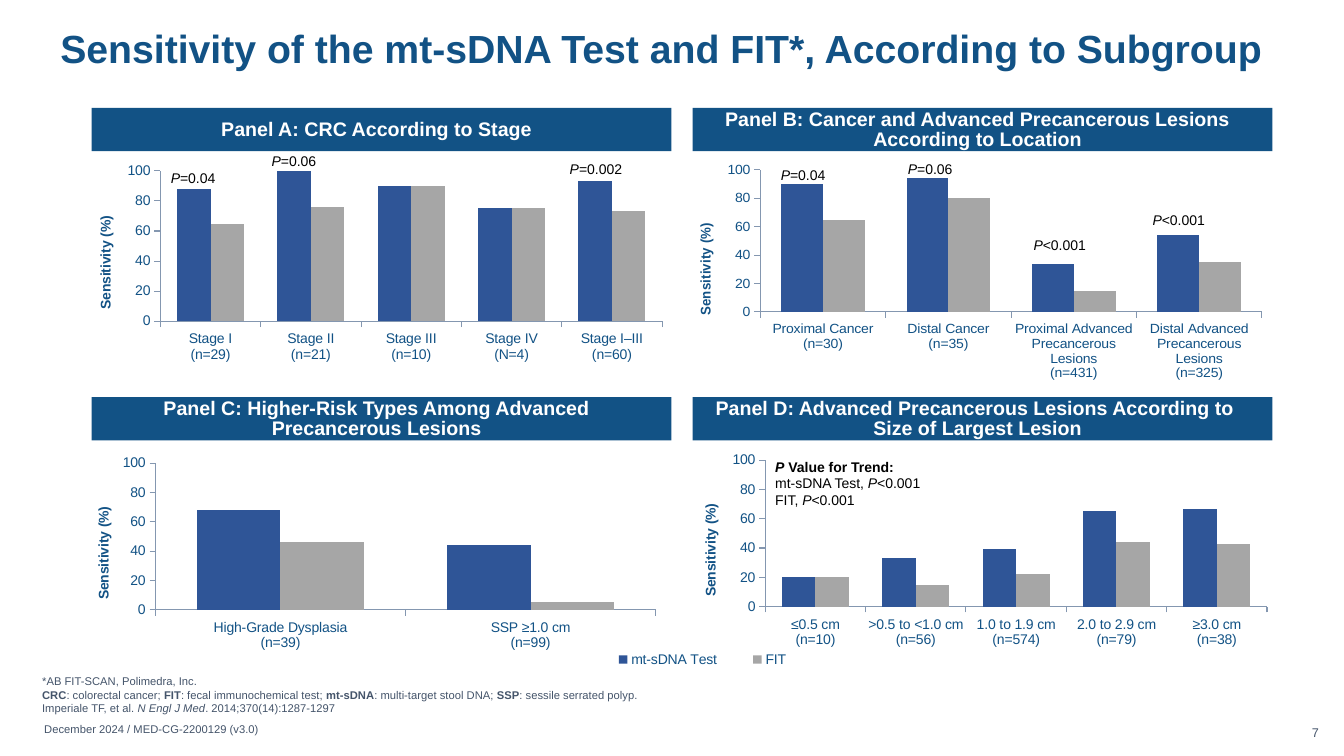
import pptx
import pptx.util
import pptx.chart.data
import pptx.dml.color
import pptx.enum.chart
import pptx.enum.shapes
import pptx.enum.text
import pptx.oxml
import pptx.oxml.ns

Inches, Pt = pptx.util.Inches, pptx.util.Pt
RGBColor = pptx.dml.color.RGBColor
Align, Anchor = pptx.enum.text.PP_ALIGN, pptx.enum.text.MSO_ANCHOR

NAVY = RGBColor(0x12, 0x52, 0x85)
BAR_BLUE = RGBColor(0x2F, 0x55, 0x97)
BAR_GRAY = RGBColor(0xA6, 0xA6, 0xA6)
AXIS_LINE = RGBColor(0x84, 0x97, 0xB0)
SLATE = RGBColor(0x44, 0x54, 0x6A)
BLACK = RGBColor(0, 0, 0)
WHITE = RGBColor(0xFF, 0xFF, 0xFF)


class SubgroupSlide:
    font = "Arial"

    def __init__(self, presentation):
        self.slide = presentation.slides.add_slide(presentation.slide_layouts[6])

    def fill_text(self, frame, paragraphs, size, color, align=Align.LEFT, spacing=None):
        """Each paragraph is a list of (text, style); style holds b and/or i."""
        for index, pieces in enumerate(paragraphs):
            paragraph = frame.add_paragraph() if index else frame.paragraphs[0]
            paragraph.alignment = align
            if spacing:
                paragraph.line_spacing = spacing
            for text, style in pieces:
                for number, line in enumerate(text.split("\n")):
                    if number:
                        paragraph.add_line_break()
                    run = paragraph.add_run()
                    run.text = line
                    run.font.name, run.font.size = self.font, Pt(size)
                    run.font.color.rgb = color
                    run.font.bold, run.font.italic = "b" in style, "i" in style

    def text(self, box, paragraphs, size, color, anchor=Anchor.MIDDLE, wrap=True,
             inset=None, **layout):
        frame = self.slide.shapes.add_textbox(*map(Inches, box)).text_frame
        frame.word_wrap = wrap
        frame.vertical_anchor = anchor
        if inset is not None:
            frame.margin_left = frame.margin_right = Inches(inset)
            frame.margin_top = frame.margin_bottom = Inches(inset)
        self.fill_text(frame, paragraphs, size, color, **layout)

    def p_value(self, value, left, top):
        width = 0.65 if len(value) == 5 else 0.72
        self.text((left, top, width, 0.27), [[("P", "i"), (value, "")]], 10, BLACK,
                  wrap=False, align=Align.CENTER)

    def banner(self, left, top, heading):
        bar = self.slide.shapes.add_shape(
            pptx.enum.shapes.MSO_SHAPE.RECTANGLE,
            Inches(left), Inches(top), Inches(5.75), Inches(0.43))
        bar.shadow.inherit = False
        bar.fill.solid()
        bar.fill.fore_color.rgb = NAVY
        bar.line.fill.background()
        frame = bar.text_frame
        frame.word_wrap = True
        frame.vertical_anchor = Anchor.MIDDLE
        frame.margin_left, frame.margin_right = 0, Inches(0.1)
        frame.margin_top, frame.margin_bottom = Inches(0.05), Inches(0.03)
        self.fill_text(frame, [[(heading, "b")]], 14, WHITE, Align.CENTER, 0.86)

    def place(self, parent, index, target, x, y, w, h):
        """Give a plot area or legend a fixed place within its chart."""
        inner = '<c:layoutTarget val="inner"/>' if target else ""
        for old in parent.findall(pptx.oxml.ns.qn("c:layout")):
            parent.remove(old)
        parent.insert(index, pptx.oxml.parse_xml(
            f'<c:layout {pptx.oxml.ns.nsdecls("c")}><c:manualLayout>{inner}'
            '<c:xMode val="edge"/><c:yMode val="edge"/>'
            f'<c:x val="{x}"/><c:y val="{y}"/><c:w val="{w}"/><c:h val="{h}"/>'
            '</c:manualLayout></c:layout>'))

    def columns(self, box, categories, test, fit, plot, legend=None):
        data = pptx.chart.data.CategoryChartData()
        data.categories = categories
        data.add_series("mt-sDNA Test", test)
        data.add_series("FIT", fit)
        chart = self.slide.shapes.add_chart(
            pptx.enum.chart.XL_CHART_TYPE.COLUMN_CLUSTERED,
            *map(Inches, box), data).chart
        chart.has_title = False
        chart.font.name, chart.font.size = self.font, Pt(10)
        chart.font.color.rgb = NAVY

        # Bars, on a clear background
        bars = chart.plots[0]
        bars.gap_width, bars.overlap, bars.vary_by_categories = 100, 0, False
        for series, color in zip(bars.series, (BAR_BLUE, BAR_GRAY)):
            series.format.fill.solid()
            series.format.fill.fore_color.rgb = color
        plot_area = bars._element.getparent()
        self.place(plot_area, 0, True, *plot)
        plot_area.getparent().addnext(pptx.oxml.parse_xml(
            f'<c:spPr {pptx.oxml.ns.nsdecls("c", "a")}><a:noFill/>'
            '<a:ln><a:noFill/></a:ln></c:spPr>'))

        # Axes
        for axis in (chart.category_axis, chart.value_axis):
            axis.has_major_gridlines = False
            axis.major_tick_mark = pptx.enum.chart.XL_TICK_MARK.OUTSIDE
            axis.minor_tick_mark = pptx.enum.chart.XL_TICK_MARK.NONE
            axis.format.line.color.rgb = AXIS_LINE
            axis.format.line.width = Pt(0.75)
        percent = chart.value_axis
        percent.minimum_scale, percent.maximum_scale, percent.major_unit = 0, 100, 20
        self.fill_text(percent.axis_title.text_frame, [[("Sensitivity (%)", "b")]], 10,
                       NAVY, Align.CENTER)

        # Legend
        chart.has_legend = legend is not None
        if legend:
            chart.legend.position = pptx.enum.chart.XL_LEGEND_POSITION.BOTTOM
            chart.legend.include_in_layout = False
            chart.legend.font.name, chart.legend.font.size = self.font, Pt(10)
            chart.legend.font.color.rgb = NAVY
            self.place(chart.legend._element, 1, False, *legend)


def main():
    presentation = pptx.Presentation()
    presentation.slide_width, presentation.slide_height = Inches(13.33), Inches(7.5)
    page = SubgroupSlide(presentation)

    # Title
    page.text((0.5, -0.01, 12.32, 1.04),
              [[("Sensitivity of the mt-sDNA Test and FIT*, According to Subgroup", "b")]],
              28, NAVY, spacing=0.85)

    # Panels: banner, chart, P values
    left, right, upper, lower = 0.91, 6.87, 1.07, 3.94
    upper_plot, lower_plot = (0.115, 0.086, 0.867, 0.654), (0.115, 0.086, 0.867, 0.637)
    panels = [
        (left, upper, "Panel A: CRC According to Stage",
         (0.93, 1.5, 5.74, 2.28),
         ["Stage I\n(n=29)", "Stage II\n(n=21)", "Stage III\n(n=10)",
          "Stage IV\n(N=4)", "Stage I–III\n(n=60)"],
         (88, 100, 90, 75, 93), (65, 76, 90, 75, 73), upper_plot, None,
         [("=0.04", 1.59, 1.63), ("=0.06", 2.59, 1.46), ("=0.002", 5.55, 1.54)]),
        (right, upper,
         "Panel B: Cancer and Advanced Precancerous Lesions\nAccording to Location",
         (6.88, 1.5, 5.74, 2.28),
         ["Proximal Cancer\n(n=30)", "Distal Cancer\n(n=35)",
          "Proximal Advanced\nPrecancerous Lesions\n(n=431)",
          "Distal Advanced\nPrecancerous Lesions\n(n=325)"],
         (90, 94, 34, 54), (65, 80, 15, 35), upper_plot, None,
         [("=0.04", 7.64, 1.6), ("=0.06", 8.9, 1.54),
          ("<0.001", 10.15, 2.29), ("<0.001", 11.33, 2.05)]),
        (left, lower,
         "Panel C: Higher-Risk Types Among Advanced\nPrecancerous Lesions",
         (0.91, 4.4, 8.78, 2.28),
         ["High-Grade Dysplasia\n(n=39)", "SSP ≥1.0 cm\n(n=99)"],
         (68, 44), (46, 5), (0.072, 0.086, 0.565, 0.637), (0.56, 0.89, 0.26, 0.1), []),
        (right, lower,
         "Panel D: Advanced Precancerous Lesions According to \nSize of Largest Lesion",
         (6.93, 4.37, 5.74, 2.28),
         ["≤0.5 cm\n(n=10)", ">0.5 to <1.0 cm\n(n=56)", "1.0 to 1.9 cm\n(n=574)",
          "2.0 to 2.9 cm\n(n=79)", "≥3.0 cm\n(n=38)"],
         (20, 33, 39, 65, 67), (20, 15, 22, 44, 43), lower_plot, None, []),
    ]
    for x, y, heading, box, categories, test, fit, plot, legend, p_values in panels:
        page.banner(x, y, heading)
        page.columns(box, categories, test, fit, plot, legend)
        for p_value in p_values:
            page.p_value(*p_value)

    # Trend note in panel D
    page.text((7.59, 4.49, 1.72, 0.61),
              [[("P", "bi"), (" Value for Trend:", "b")],
               [("mt-sDNA Test, ", ""), ("P", "i"), ("<0.001", "")],
               [("FIT, ", ""), ("P", "i"), ("<0.001", "")]],
              10, BLACK, wrap=False)

    # Footnotes, document code and page number
    page.text((0.32, 6.64, 12.56, 0.5),
              [[("*AB FIT-SCAN, Polimedra, Inc.", "")],
               [("CRC", "b"), (": colorectal cancer; ", ""),
                ("FIT", "b"), (": fecal immunochemical test; ", ""),
                ("mt-sDNA", "b"), (": multi-target stool DNA; ", ""),
                ("SSP", "b"), (": sessile serrated polyp.", "")],
               [("Imperiale TF, et al. ", ""), ("N Engl J Med", "i"),
                (". 2014;370(14):1287-1297", "")]],
              8, SLATE, anchor=Anchor.BOTTOM)
    page.text((0.34, 7.13, 2.95, 0.24), [[("December 2024 / MED-CG-2200129 (v3.0)", "")]],
              8, SLATE, anchor=Anchor.TOP, spacing=0.9)
    page.text((12.6, 7.21, 0.48, 0.13), [[("7", "")]], 9, SLATE, anchor=Anchor.BOTTOM,
              inset=0, align=Align.RIGHT, spacing=0.9)

    presentation.save("out.pptx")


if __name__ == "__main__":
    main()
